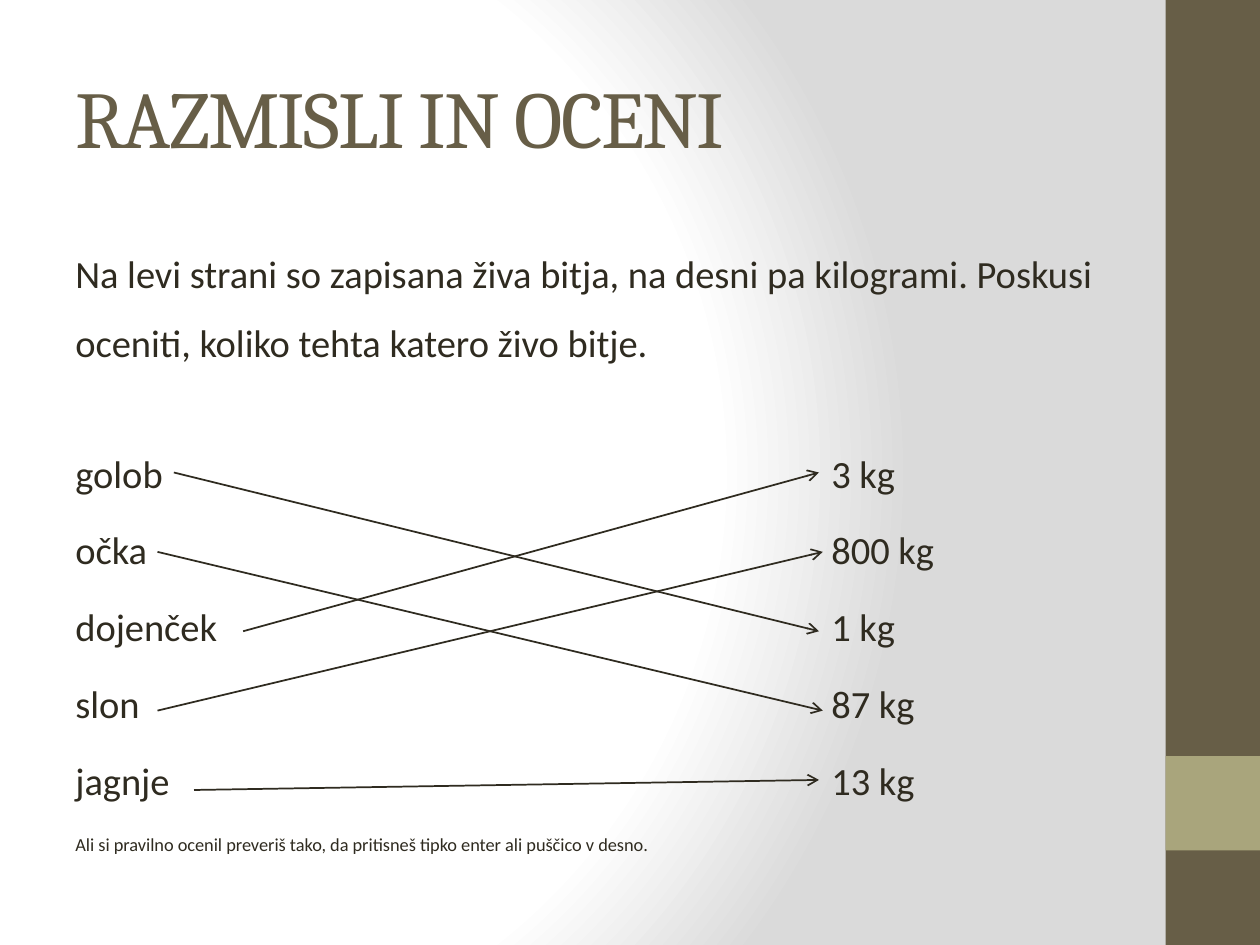
import pptx
import pptx.dml.color
import pptx.enum.shapes
import pptx.enum.text
import pptx.oxml
import pptx.oxml.ns
import pptx.util
from pptx.util import Inches, Pt

COLOURS = {
    "ink": "2F2B20",
    "brown": "675E47",
    "olive": "A9A57C",
    "white": "FFFFFF",
    "grey": "DADADA",
}
NAMESPACE = pptx.oxml.ns.nsdecls("a", "p")


def colour(name):
    return pptx.dml.color.RGBColor.from_string(COLOURS[name])


def add_text(para, text, font="Calibri", size=22, ink="ink", tracking=None,
             line_spacing=1.0, space_before=0.0, tab=None):
    """Fill a paragraph; tracking is in points, tab is a length from the inset."""
    para.line_spacing = line_spacing
    para.space_before = Pt(space_before)
    if tab is not None:
        para._p.get_or_add_pPr().append(pptx.oxml.parse_xml(
            f'<a:tabLst {NAMESPACE}><a:tab pos="{int(tab)}" algn="l"/></a:tabLst>'))
    span = para.add_run()
    span.text = text
    span.font.name = font
    span.font.size = Pt(size)
    span.font.color.rgb = colour(ink)
    if tracking is not None:
        span._r.get_or_add_rPr().set("spc", str(int(tracking * 100)))


class SlideBuilder:
    """Holds the style and the slide being built."""

    line_width = Pt(1)

    def __init__(self, deck):
        self.page = deck.slides.add_slide(deck.slide_layouts[6])

    def radial_background(self, stops):
        stop_xml = "".join(
            f'<a:gs pos="{percent * 1000}"><a:srgbClr val="{COLOURS[name]}"/></a:gs>'
            for percent, name in stops)
        background = pptx.oxml.parse_xml(
            f'<p:bg {NAMESPACE}><p:bgPr><a:gradFill rotWithShape="1">'
            f'<a:gsLst>{stop_xml}</a:gsLst><a:path path="circle">'
            '<a:fillToRect l="20000" t="50000" r="100000" b="50000"/></a:path>'
            '</a:gradFill><a:effectLst/></p:bgPr></p:bg>')
        self.page._element.cSld.insert(0, background)

    def band(self, left, top, width, height, fill):
        shape = self.page.shapes.add_shape(
            pptx.enum.shapes.MSO_SHAPE.RECTANGLE,
            Inches(left), Inches(top), Inches(width), Inches(height))
        shape.shadow.inherit = False
        shape.fill.solid()
        shape.fill.fore_color.rgb = colour(fill)
        shape.line.fill.background()

    def text_box(self, left, top, width, height, paragraphs, anchor="TOP"):
        """Add a box from (text, format) pairs, one for each paragraph."""
        box = self.page.shapes.add_textbox(
            Inches(left), Inches(top), Inches(width), Inches(height))
        frame = box.text_frame
        frame.word_wrap = True
        frame.vertical_anchor = getattr(pptx.enum.text.MSO_ANCHOR, anchor)
        for index, (text, style) in enumerate(paragraphs):
            para = frame.add_paragraph() if index else frame.paragraphs[0]
            add_text(para, text, **style)

    def arrow(self, start, end):
        connector = self.page.shapes.add_connector(
            pptx.enum.shapes.MSO_CONNECTOR.STRAIGHT,
            *(Inches(value) for value in (*start, *end)))
        connector.line.color.rgb = colour("ink")
        connector.line.width = self.line_width
        connector.line._get_or_add_ln().append(
            pptx.oxml.parse_xml(f'<a:tailEnd {NAMESPACE} type="arrow"/>'))
        connector._element.spPr.append(
            pptx.oxml.parse_xml(f'<a:effectLst {NAMESPACE}/>'))


def main():
    deck = pptx.Presentation()
    deck.slide_width, deck.slide_height = Inches(10), Inches(7.5)
    slide = SlideBuilder(deck)

    slide.radial_background([(0, "white"), (75, "white"), (100, "grey")])
    slide.band(9.25, 0, 0.75, 7.5, "brown")
    slide.band(9.25, 6, 0.75, 0.75, "olive")

    title = dict(font="Cambria", size=46, ink="brown", tracking=-1)
    slide.text_box(0.5, 0.3, 8.33, 1.25, [("RAZMISLI IN OCENI", title)], "MIDDLE")

    paragraphs = [("Na levi strani so zapisana živa bitja, na desni pa kilogrami. "
                   "Poskusi oceniti, koliko tehta katero živo bitje.",
                   dict(line_spacing=1.5))]
    pairs = [("golob", "3 kg"), ("očka", "800 kg"), ("dojenček", "1 kg"),
             ("slon", "87 kg"), ("jagnje", "13 kg")]
    for index, (creature, mass) in enumerate(pairs):
        paragraphs.append((f"{creature}\t{mass}", dict(
            line_spacing=1.5, tab=Inches(6), space_before=4.4 if index else 35)))
    paragraphs.append((
        "Ali si pravilno ocenil preveriš tako, da pritisneš tipko enter "
        "ali puščico v desno.", dict(size=10.5, space_before=17)))
    slide.text_box(0.5, 1.75, 8.33, 5.25, paragraphs)

    row_y = [3.75 + 0.63 * row for row in range(4)]
    slide.arrow((1.38, row_y[0]), (6.5, row_y[2]))
    slide.arrow((1.25, row_y[1]), (6.53, row_y[3]))
    slide.arrow((1.93, row_y[2]), (6.5, row_y[0]))
    slide.arrow((1.25, row_y[3]), (6.53, row_y[1]))
    slide.arrow((1.54, 6.27), (6.5, 6.19))

    deck.save("out.pptx")


if __name__ == "__main__":
    main()
